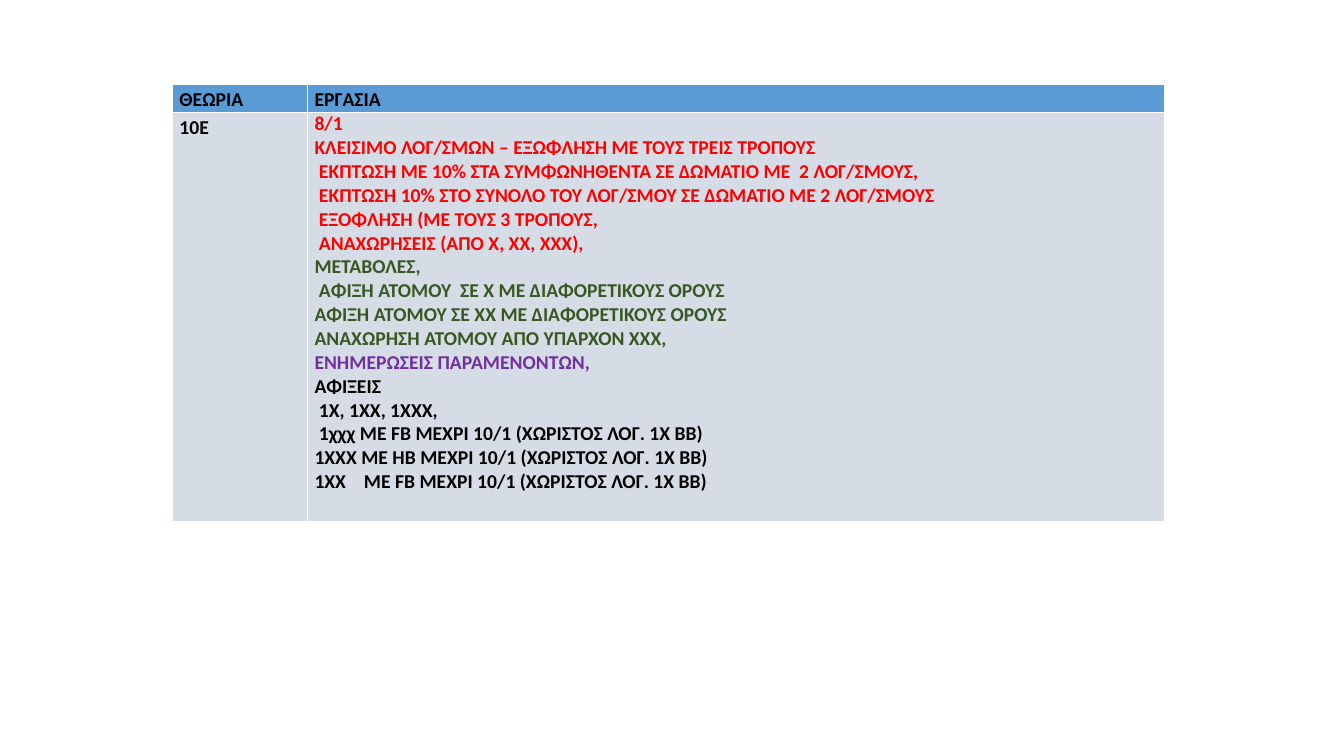
import dataclasses

import lxml.etree
import pptx
import pptx.dml.color
import pptx.enum.text
import pptx.oxml.ns
import pptx.table
import pptx.text.text
import pptx.util

SCALE = 9144  # EMU per px, at 100 px to the inch
GAP = 49  # tab stop inside a line, px


@dataclasses.dataclass(frozen=True)
class Theme:
    font: str = "Calibri"
    size: int = 14
    edge: int = 1
    black: str = "000000"
    red: str = "FF0000"
    green: str = "385723"
    purple: str = "7030A0"
    white: str = "FFFFFF"
    head: str = "5B9BD5"
    body: str = "D6DCE5"


THEME = Theme()


@dataclasses.dataclass(frozen=True)
class Group:
    color: str
    lines: tuple[str, ...]


@dataclasses.dataclass(frozen=True)
class Entry:
    row: int
    col: int
    fill: str
    groups: tuple[Group, ...]
    label: bool = True


TASKS = (
    Group(THEME.red, (
        "8/1",
        "ΚΛΕΙΣΙΜΟ ΛΟΓ/ΣΜΩΝ – ΕΞΩΦΛΗΣΗ ΜΕ ΤΟΥΣ ΤΡΕΙΣ ΤΡΟΠΟΥΣ",
        " ΕΚΠΤΩΣΗ ΜΕ 10% ΣΤΑ ΣΥΜΦΩΝΗΘΕΝΤΑ ΣΕ ΔΩΜΑΤΙΟ ΜΕ  2 ΛΟΓ/ΣΜΟΥΣ,",
        " ΕΚΠΤΩΣΗ 10% ΣΤΟ ΣΥΝΟΛΟ ΤΟΥ ΛΟΓ/ΣΜΟΥ ΣΕ ΔΩΜΑΤΙΟ ΜΕ 2 ΛΟΓ/ΣΜΟΥΣ",
        " ΕΞΟΦΛΗΣΗ (ΜΕ ΤΟΥΣ 3 ΤΡΟΠΟΥΣ,",
        " ΑΝΑΧΩΡΗΣΕΙΣ (ΑΠΟ Χ, ΧΧ, ΧΧΧ),",
    )),
    Group(THEME.green, (
        "ΜΕΤΑΒΟΛΕΣ,",
        " ΑΦΙΞΗ ΑΤΟΜΟΥ  ΣΕ Χ ΜΕ ΔΙΑΦΟΡΕΤΙΚΟΥΣ ΟΡΟΥΣ",
        "ΑΦΙΞΗ ΑΤΟΜΟΥ ΣΕ ΧΧ ΜΕ ΔΙΑΦΟΡΕΤΙΚΟΥΣ ΟΡΟΥΣ",
        "ΑΝΑΧΩΡΗΣΗ ΑΤΟΜΟΥ ΑΠΟ ΥΠΑΡΧΟΝ ΧΧΧ,",
    )),
    Group(THEME.purple, ("ΕΝΗΜΕΡΩΣΕΙΣ ΠΑΡΑΜΕΝΟΝΤΩΝ,",)),
    Group(THEME.black, (
        "ΑΦΙΞΕΙΣ",
        " 1Χ, 1ΧΧ, 1ΧΧΧ,",
        " 1χχχ ΜΕ FB ΜΕΧΡΙ 10/1 (ΧΩΡΙΣΤΟΣ ΛΟΓ. 1Χ ΒΒ)",
        "1ΧΧΧ ΜΕ HB ΜΕΧΡΙ 10/1 (ΧΩΡΙΣΤΟΣ ΛΟΓ. 1Χ ΒΒ)",
        "1ΧΧ\tΜΕ FΒ ΜΕΧΡΙ 10/1 (ΧΩΡΙΣΤΟΣ ΛΟΓ. 1Χ ΒΒ)",
    )),
)

ENTRIES = (
    Entry(0, 0, THEME.head, (Group(THEME.black, ("ΘΕΩΡΙΑ",)),)),
    Entry(0, 1, THEME.head, (Group(THEME.black, ("ΕΡΓΑΣΙΑ",)),)),
    Entry(1, 0, THEME.body, (Group(THEME.black, ("10Ε",)),)),
    Entry(1, 1, THEME.body, TASKS, label=False),
)


def px(count: int) -> pptx.util.Emu:
    return pptx.util.Emu(count * SCALE)


def rgb(color: str) -> pptx.dml.color.RGBColor:
    return pptx.dml.color.RGBColor.from_string(color)


def add_node(parent: lxml.etree.ElementBase, tag: str,
             **attrs: str) -> lxml.etree.ElementBase:
    return lxml.etree.SubElement(parent, pptx.oxml.ns.qn(tag), attrs)


def set_edges(cell: pptx.table._Cell) -> None:
    props = cell._tc.get_or_add_tcPr()
    width = str(pptx.util.Pt(THEME.edge))
    for tag in ("a:lnL", "a:lnR", "a:lnT", "a:lnB"):
        fill = add_node(add_node(props, tag, w=width), "a:solidFill")
        add_node(fill, "a:srgbClr", val=THEME.white)


def write_line(para: pptx.text.text._Paragraph, text: str,
               color: str, label: bool) -> None:
    para.text = text
    para.font.name = THEME.font
    para.font.size = pptx.util.Pt(THEME.size)
    para.font.bold = True
    para.font.color.rgb = rgb(color)
    if label:
        para.alignment = pptx.enum.text.PP_ALIGN.JUSTIFY
        para.line_spacing = 1.15
    if "\t" in text:
        stops = lxml.etree.Element(pptx.oxml.ns.qn("a:tabLst"))
        add_node(stops, "a:tab", pos=str(px(GAP)), algn="l")
        para._p.get_or_add_pPr().insert(0, stops)


def draw_entry(table: pptx.table.Table, entry: Entry) -> None:
    cell = table.cell(entry.row, entry.col)
    cell.margin_left = cell.margin_right = px(7)
    cell.margin_top = cell.margin_bottom = px(0)
    set_edges(cell)
    cell.fill.solid()
    cell.fill.fore_color.rgb = rgb(entry.fill)
    frame = cell.text_frame
    lines = [(text, group.color) for group in entry.groups for text in group.lines]
    for index, (text, color) in enumerate(lines):
        para = frame.add_paragraph() if index else frame.paragraphs[0]
        write_line(para, text, color, entry.label)


def main() -> None:
    deck = pptx.Presentation()
    deck.slide_width, deck.slide_height = px(1333), px(750)
    slide = deck.slides.add_slide(deck.slide_layouts[6])

    # Table grid
    widths, heights = (134, 850), (27, 406)
    table = slide.shapes.add_table(
        len(heights), len(widths), px(171), px(84),
        px(sum(widths)), px(sum(heights))).table
    table.first_row = table.horz_banding = False
    for column, width in zip(table.columns, widths):
        column.width = px(width)
    for row, height in zip(table.rows, heights):
        row.height = px(height)

    # Cell content
    for entry in ENTRIES:
        draw_entry(table, entry)

    deck.save("out.pptx")


if __name__ == "__main__":
    main()
